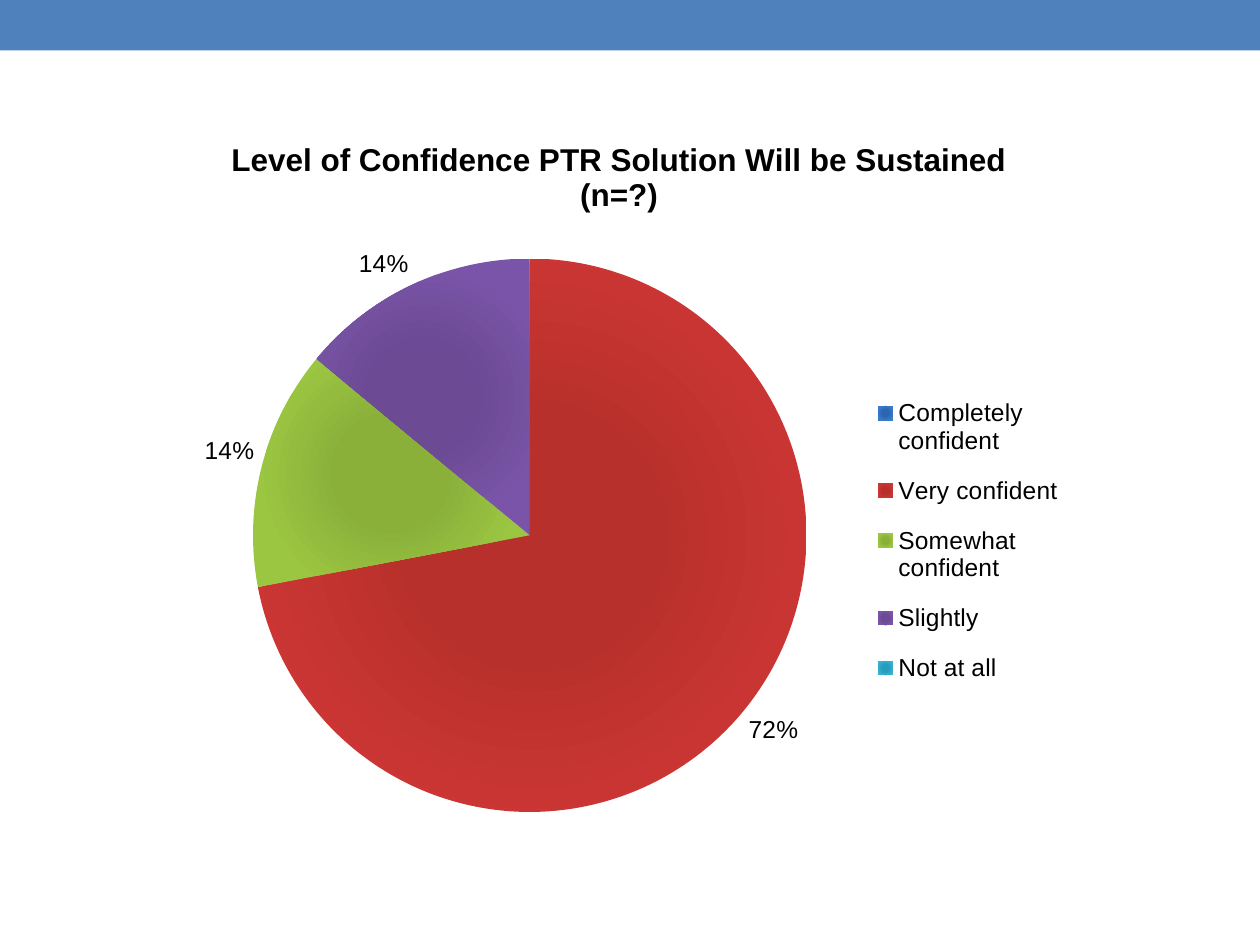
import pptx
import pptx.chart.data
import pptx.dml.color
import pptx.enum.chart
import pptx.enum.shapes
import pptx.oxml
import pptx.oxml.ns
import pptx.util

Pt = pptx.util.Pt
RGB = pptx.dml.color.RGBColor.from_string
colors = {"banner": "4F81BD", "text": "000000"}
answers = {
    "Completely confident": (0, "2A67B0", "3A7BCB"),
    "Very confident": (72, "B8302B", "CB3634"),
    "Somewhat confident": (14, "8AB03A", "9BC642"),
    "Slightly": (14, "6C4A94", "7A54A8"),
    "Not at all": (0, "269DBD", "36B1D2"),
}
chart_width, chart_height = 612, 408


def style(font, size, bold=False):
    font.name = "Arial"
    font.size = Pt(size)
    font.bold = bold
    font.color.rgb = RGB(colors["text"])


def place(owner, x, y, w=0, h=0, inner=False):
    parts = [("layoutTarget", "inner")] if inner else []
    parts += [("xMode", "edge"), ("yMode", "edge")]
    parts += [("x", x / chart_width), ("y", y / chart_height)]
    if w:
        parts += [("w", w / chart_width), ("h", h / chart_height)]
    settings = "".join(f'<c:{name} val="{value}"/>' for name, value in parts)
    layout = pptx.oxml.parse_xml(
        f'<c:layout {pptx.oxml.ns.nsdecls("c")}>'
        f"<c:manualLayout>{settings}</c:manualLayout></c:layout>"
    )
    for old in owner.xpath("c:layout"):
        owner.remove(old)
    leading = owner.xpath("c:tx | c:legendPos")
    owner.insert(len(leading), layout)


presentation = pptx.Presentation()
presentation.slide_width = Pt(720)
presentation.slide_height = Pt(540)
slide = presentation.slides.add_slide(presentation.slide_layouts[6])

banner = slide.shapes.add_shape(
    pptx.enum.shapes.MSO_SHAPE.RECTANGLE, 0, 0, Pt(720), Pt(28.8)
)
banner.shadow.inherit = False
banner.fill.solid()
banner.fill.fore_color.rgb = RGB(colors["banner"])
banner.line.fill.background()

confidence = pptx.chart.data.CategoryChartData()
confidence.categories = list(answers)
confidence.add_series("Series 1", [share for share, _, _ in answers.values()])
pie = slide.shapes.add_chart(
    pptx.enum.chart.XL_CHART_TYPE.PIE,
    Pt(48), Pt(66), Pt(chart_width), Pt(chart_height), confidence,
).chart
style(pie.font, 10)

pie.has_title = True
heading = pie.chart_title.text_frame.paragraphs[0].add_run()
heading.text = "Level of Confidence PTR Solution Will be Sustained (n=?)"
style(heading.font, 18, bold=True)

pie.has_legend = True
pie.legend.position = pptx.enum.chart.XL_LEGEND_POSITION.RIGHT
pie.legend.include_in_layout = False
style(pie.legend.font, 14)

plot = pie.plots[0]
plot.vary_by_categories = True
plot.has_data_labels = True
percents = plot.data_labels
percents.show_percentage = True
percents.show_value = False
percents.number_format = "0%;;;"
percents.number_format_is_linked = False
percents.position = pptx.enum.chart.XL_LABEL_POSITION.OUTSIDE_END
style(percents.font, 14)

for index, (_, center, edge) in enumerate(answers.values()):
    slice_format = plot.series[0].points[index].format
    slice_format.line.fill.background()
    slice_format.fill.gradient()
    stops = slice_format.fill.gradient_stops
    for stop, shade, position in zip(stops, (center, edge), (0.3, 0.75)):
        stop.color.rgb = RGB(shade)
        stop.position = position

for direction in pie._chartSpace.xpath(".//a:gradFill/a:lin"):
    radial = pptx.oxml.parse_xml(
        f'<a:path {pptx.oxml.ns.nsdecls("a")} path="circle">'
        '<a:fillToRect l="50000" t="50000" r="50000" b="50000"/></a:path>'
    )
    direction.getparent().replace(direction, radial)

place(pie._chartSpace.chart.plotArea, 96.6, 81.8, 316.3, 316.3, inner=True)
place(pie.chart_title._element, 81, 10)
place(pie.legend._element, 444, 149.5, 122.4, 187)

presentation.save("out.pptx")
